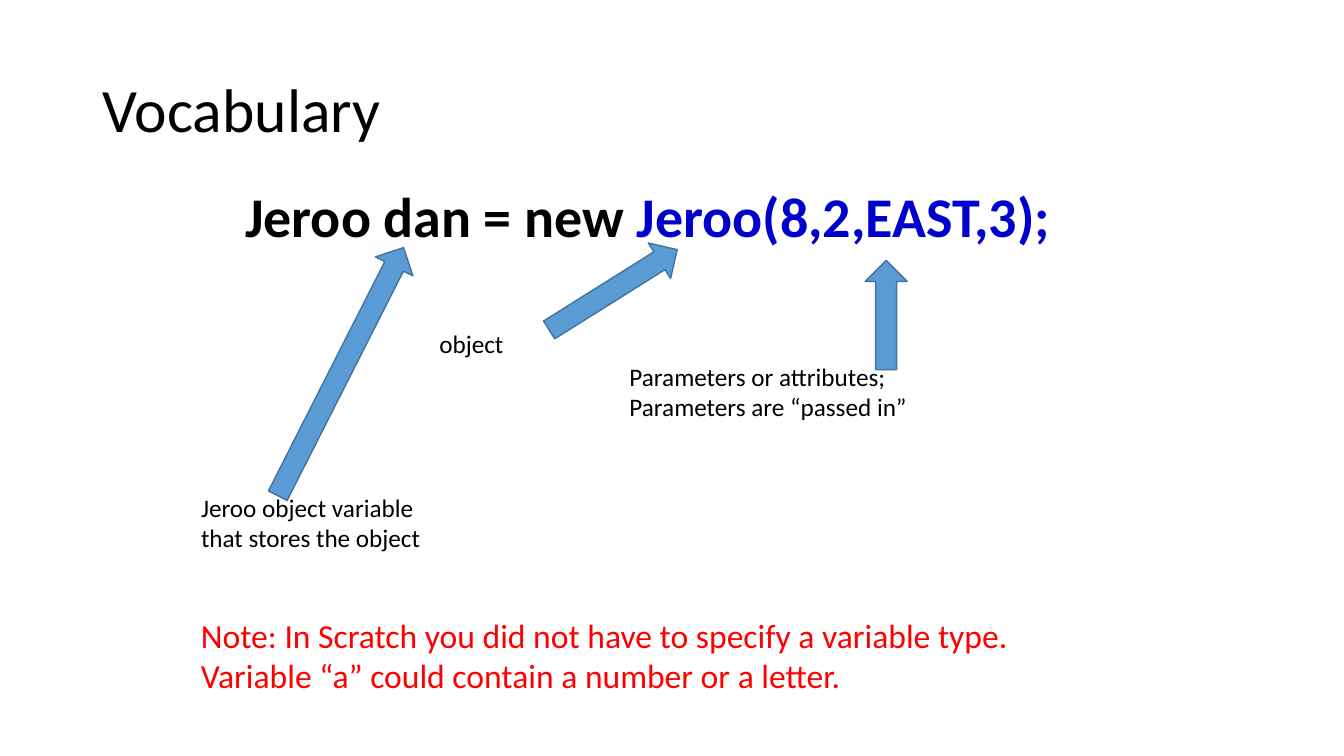
import pptx
import pptx.util
import pptx.dml.color
import pptx.enum.shapes
import pptx.enum.text

PX = 9525
INK = {
    "black": "000000",
    "blue": "0000CC",
    "red": "FF0000",
    "fill": "5B9BD5",
    "edge": "43739E",
}


def color(name):
    return pptx.dml.color.RGBColor.from_string(INK[name])


def apply(target, values):
    """Set each attribute named in values on target."""
    for name, value in values.items():
        setattr(target, name, value)


class Board:
    """Holds the style and the current slide; lengths are px."""

    def __init__(self, deck):
        self.font = "Calibri"
        self.slide = deck.slides.add_slide(deck.slide_layouts[5])

    def letter(self, frame, lines, size, bold=False, space=1.0):
        """Fill frame with lines, each a list of (text, colour) runs."""
        for i, line in enumerate(lines):
            para = frame.paragraphs[0] if i == 0 else frame.add_paragraph()
            apply(para, {"alignment": pptx.enum.text.PP_ALIGN.LEFT, "line_spacing": space})
            for text, ink in line:
                run = para.add_run()
                run.text = text
                apply(run.font, {"name": self.font, "size": pptx.util.Pt(size), "bold": bold})
                run.font.color.rgb = color(ink)

    def title(self, box, text):
        shape = self.slide.shapes.title
        apply(shape, dict(zip(("left", "top", "width", "height"), (n * PX for n in box))))
        shape.text_frame.vertical_anchor = pptx.enum.text.MSO_ANCHOR.MIDDLE
        self.letter(shape.text_frame, [[(text, "black")]], 44, space=0.9)

    def text(self, box, lines, size=18, bold=False, wrap=False):
        frame = self.slide.shapes.add_textbox(*(n * PX for n in box)).text_frame
        apply(frame, {
            "word_wrap": wrap,
            "auto_size": pptx.enum.text.MSO_AUTO_SIZE.SHAPE_TO_FIT_TEXT,
        })
        self.letter(frame, lines, size, bold)

    def arrow(self, left, top, width, turn):
        kind = pptx.enum.shapes.MSO_SHAPE.RIGHT_ARROW
        shape = self.slide.shapes.add_shape(kind, left * PX, top * PX, width * PX, 40 * PX)
        shape.rotation = turn
        shape.shadow.inherit = False
        shape.fill.solid()
        shape.fill.fore_color.rgb = color("fill")
        shape.line.color.rgb = color("edge")
        shape.line.width = pptx.util.Pt(1)


def main():
    deck = pptx.Presentation()
    apply(deck, {"slide_width": 1280 * PX, "slide_height": 720 * PX})
    board = Board(deck)
    board.title((88, 38, 1104, 139), "Vocabulary")
    board.text(
        (224, 168, 1000, 74),
        [[("Jeroo dan = new ", "black"), ("Jeroo(8,2,EAST,3);", "blue")]],
        size=40, bold=True, wrap=True,
    )
    board.arrow(512, 256, 144, 327.9)
    board.arrow(792, 280, 104, 270)
    board.text((409, 308, 82, 39), [[("object", "black")]])
    board.text((182, 464, 230, 68), [
        [("Jeroo object variable", "black")],
        [("that stores the object", "black")],
    ])
    board.arrow(192, 334, 265, 296.9)
    board.text((182, 581, 802, 87), [
        [("Note: In Scratch you did not have to specify a variable type.", "red")],
        [("Variable “a” could contain a number or a letter.", "red")],
    ], size=24)
    board.text((590, 339, 286, 68), [
        [("Parameters or attributes;", "black")],
        [("Parameters are “passed in”", "black")],
    ])
    deck.save("out.pptx")


if __name__ == "__main__":
    main()
